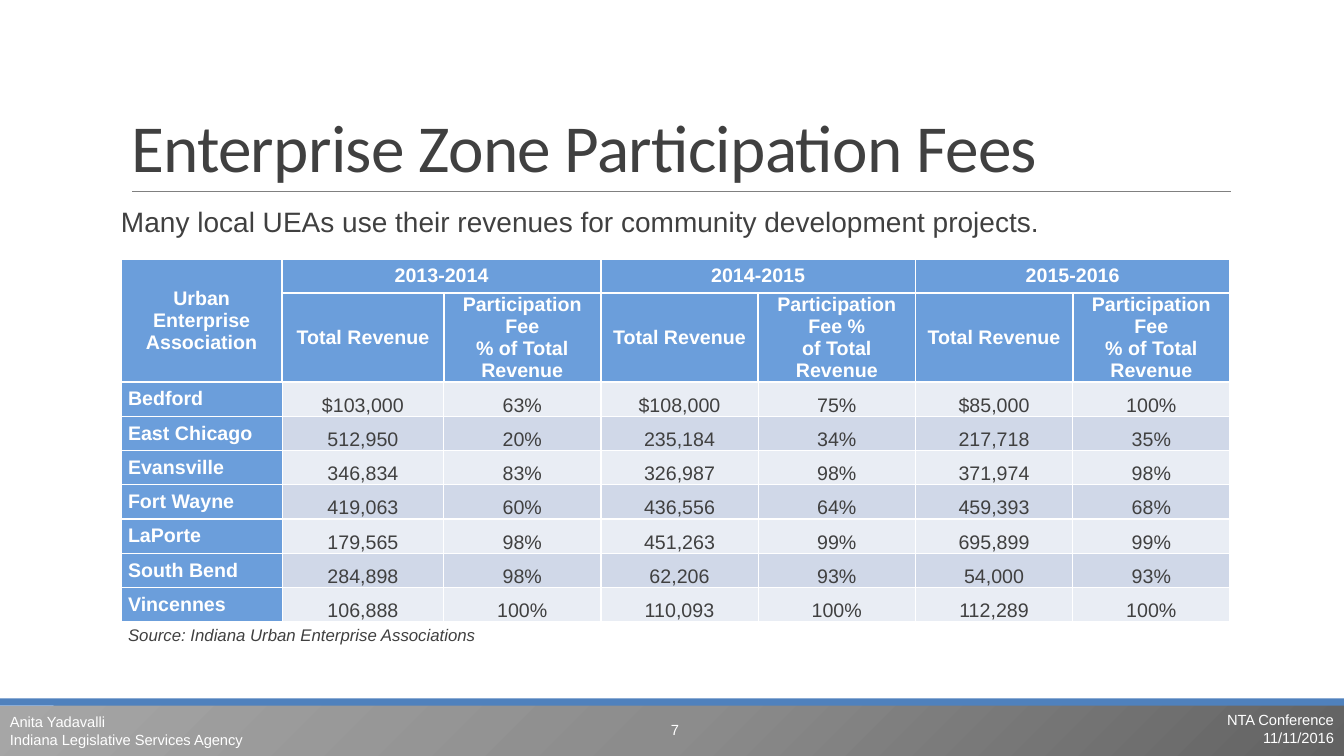
from lxml import etree
from pptx import Presentation
from pptx.dml.color import RGBColor
from pptx.enum.shapes import MSO_CONNECTOR, MSO_SHAPE
from pptx.enum.text import MSO_ANCHOR, MSO_AUTO_SIZE, PP_ALIGN
from pptx.oxml.ns import qn
from pptx.util import Inches, Pt

LEFT, CENTER, RIGHT, JUSTIFY = PP_ALIGN.LEFT, PP_ALIGN.CENTER, PP_ALIGN.RIGHT, PP_ALIGN.JUSTIFY
TOP, MIDDLE, BOTTOM = MSO_ANCHOR.TOP, MSO_ANCHOR.MIDDLE, MSO_ANCHOR.BOTTOM

COLORS = {
    "white": "FFFFFF", "text": "404040", "rule": "808080", "band": "4F81BD",
    "header": "6B9EDB", "light": "E9EDF4", "dark": "D0D8E8",
}
FOOTER_STOPS = [(0, "626262"), (50, "8C8C8C"), (100, "A6A6A6")]

TITLE = "Enterprise Zone Participation Fees"
LEAD = "Many local UEAs use their revenues for community development projects."
CORNER = "Urban Enterprise Association"
SOURCE = "Source: Indiana Urban Enterprise Associations"
YEARS = [
    ("2013-2014", ["Participation Fee", "% of Total Revenue"]),
    ("2014-2015", ["Participation Fee %", "of Total Revenue"]),
    ("2015-2016", ["Participation Fee", "% of Total Revenue"]),
]
ZONES = [
    ("Bedford", "$103,000", "63%", "$108,000", "75%", "$85,000", "100%"),
    ("East Chicago", "512,950", "20%", "235,184", "34%", "217,718", "35%"),
    ("Evansville", "346,834", "83%", "326,987", "98%", "371,974", "98%"),
    ("Fort Wayne", "419,063", "60%", "436,556", "64%", "459,393", "68%"),
    ("LaPorte", "179,565", "98%", "451,263", "99%", "695,899", "99%"),
    ("South Bend", "284,898", "98%", "62,206", "93%", "54,000", "93%"),
    ("Vincennes", "106,888", "100%", "110,093", "100%", "112,289", "100%"),
]
FOOTERS = [
    ((10.63, 7.03, 2.7, 0.4), RIGHT, ["NTA Conference", "11/11/2016"]),
    ((0, 7.05, 5.27, 0.4), LEFT, ["Anita Yadavalli", "Indiana Legislative Services Agency"]),
    ((5.98, 7.04, 1.43, 0.4), CENTER, ["7"]),
]
COLUMN_WIDTHS = [1.6, 1.6] + [1.56] * 5
ROW_HEIGHTS = [0.34, 0.88] + [0.34] * len(ZONES) + [0.27]


def color(name):
    return RGBColor.from_string(COLORS[name])


def write(frame, lines, size, tint="text", align=LEFT, name="Arial", spacing=None, **styles):
    for index, line in enumerate(lines):
        para = frame.paragraphs[0] if index == 0 else frame.add_paragraph()
        para.alignment = align
        para.space_before = Pt(0)
        if spacing:
            para.line_spacing = spacing
        span = para.add_run()
        span.text = line
        span.font.color.rgb = color(tint)
        for key, value in {"size": Pt(size), "name": name, **styles}.items():
            setattr(span.font, key, value)


def place(shape, box):
    for key, value in zip(("left", "top", "width", "height"), box):
        setattr(shape, key, Inches(value))


def set_frame(frame, anchor, side=0.1):
    formats = {"word_wrap": True, "auto_size": MSO_AUTO_SIZE.NONE, "vertical_anchor": anchor,
               "margin_left": Inches(side), "margin_right": Inches(side),
               "margin_top": Inches(0.05), "margin_bottom": Inches(0.05)}
    for key, value in formats.items():
        setattr(frame, key, value)


def add_bar(page, top, height):
    bar = page.shapes.add_shape(MSO_SHAPE.RECTANGLE, 0, Inches(top), Inches(13.33), Inches(height))
    bar.shadow.inherit = False
    bar.line.fill.background()
    bar.fill.solid()
    bar.fill.fore_color.rgb = color("band")
    return bar


def shade_radially(bar):
    properties = bar._element.spPr
    solid = properties.find(qn("a:solidFill"))
    gradient = etree.Element(qn("a:gradFill"), rotWithShape="1")
    stops = etree.SubElement(gradient, qn("a:gsLst"))
    for position, value in FOOTER_STOPS:
        stop = etree.SubElement(stops, qn("a:gs"), pos=str(position * 1000))
        etree.SubElement(stop, qn("a:srgbClr"), val=value)
    route = etree.SubElement(gradient, qn("a:path"), path="circle")
    etree.SubElement(route, qn("a:fillToRect"), l="100000", t="100000")
    properties.replace(solid, gradient)


def set_borders(cell, width, top_width):
    properties = cell._tc.get_or_add_tcPr()
    for side in ("L", "R", "T", "B"):
        points = top_width if side == "T" else width
        line = etree.SubElement(properties, qn("a:ln" + side), w=str(Pt(points)))
        fill = etree.SubElement(line, qn("a:solidFill"))
        etree.SubElement(fill, qn("a:srgbClr"), val=COLORS["white"])


def fill_cell(cell, lines, fill=None, tint="white", anchor=MIDDLE, align=CENTER, size=14, **styles):
    formats = {"vertical_anchor": anchor, "margin_left": Inches(0.07),
               "margin_right": Inches(0.07), "margin_top": 0, "margin_bottom": 0}
    for key, value in formats.items():
        setattr(cell, key, value)
    if fill:
        cell.fill.solid()
        cell.fill.fore_color.rgb = color(fill)
    else:
        cell.fill.background()
    write(cell.text_frame, lines, size, tint, align, **styles)


def add_fee_table(page):
    frame = page.shapes.add_table(len(ROW_HEIGHTS), len(COLUMN_WIDTHS), Inches(1.2), Inches(2.57),
                                  Inches(sum(COLUMN_WIDTHS)), Inches(sum(ROW_HEIGHTS)))
    table = frame.table
    table.first_row = table.horz_banding = False
    for column, width in zip(table.columns, COLUMN_WIDTHS):
        column.width = Inches(width)
    for index, (row, height) in enumerate(zip(table.rows, ROW_HEIGHTS)):
        row.height = Inches(height)
        for cell in row.cells:
            set_borders(cell, 1.5 if index < 2 else 1, 1.5 if index < 3 else 1)

    table.cell(0, 0).merge(table.cell(1, 0))
    fill_cell(table.cell(0, 0), [CORNER], "header", bold=True)
    for index, (year, fee_lines) in enumerate(YEARS):
        column = 1 + 2 * index
        table.cell(0, column).merge(table.cell(0, column + 1))
        fill_cell(table.cell(0, column), [year], "header", bold=True)
        fill_cell(table.cell(1, column), ["Total Revenue"], "header", bold=True)
        fill_cell(table.cell(1, column + 1), fee_lines, "header", bold=True)

    for row, (zone, *values) in enumerate(ZONES, 2):
        fill_cell(table.cell(row, 0), [zone], "header", align=JUSTIFY, bold=True)
        stripe = "dark" if row % 2 else "light"
        for column, value in enumerate(values, 1):
            fill_cell(table.cell(row, column), [value], stripe, "text", BOTTOM, bold=False)

    last = len(ROW_HEIGHTS) - 1
    table.cell(last, 0).merge(table.cell(last, len(COLUMN_WIDTHS) - 1))
    fill_cell(table.cell(last, 0), [SOURCE], None, "text", align=LEFT, size=12,
              bold=False, italic=True)


def main():
    deck = Presentation()
    deck.slide_width, deck.slide_height = Inches(13.33), Inches(7.5)
    page = deck.slides.add_slide(deck.slide_layouts[1])

    shade_radially(add_bar(page, 7, 0.5))
    add_bar(page, 6.93, 0.07)
    rule = page.shapes.add_connector(MSO_CONNECTOR.STRAIGHT, Inches(1.31), Inches(1.9),
                                     Inches(12.21), Inches(1.9))
    rule.line.color.rgb = color("rule")
    rule.line.width = Pt(0.5)
    etree.SubElement(rule._element.spPr, qn("a:effectLst"))

    title = page.shapes.title
    place(title, (1.2, 0.31, 11, 1.59))
    set_frame(title.text_frame, BOTTOM)
    write(title.text_frame, [TITLE], 48, name="Calibri", spacing=0.85)
    title.text_frame.paragraphs[0].runs[0].font._element.set("spc", "-50")

    lead = page.placeholders[1]
    place(lead, (1.2, 2.02, 11, 0.49))
    set_frame(lead.text_frame, TOP, 0)
    write(lead.text_frame, [LEAD], 20, spacing=0.9)
    para = lead.text_frame.paragraphs[0]
    para.space_after = Pt(2)
    properties = para._p.get_or_add_pPr()
    properties.set("marL", "0")
    properties.set("indent", "0")
    etree.SubElement(properties, qn("a:buNone"))

    for box, align, lines in FOOTERS:
        footer = page.shapes.add_textbox(*map(Inches, box))
        set_frame(footer.text_frame, MIDDLE)
        write(footer.text_frame, lines, 10.5, "white", align)

    add_fee_table(page)
    deck.save("out.pptx")


if __name__ == "__main__":
    main()
